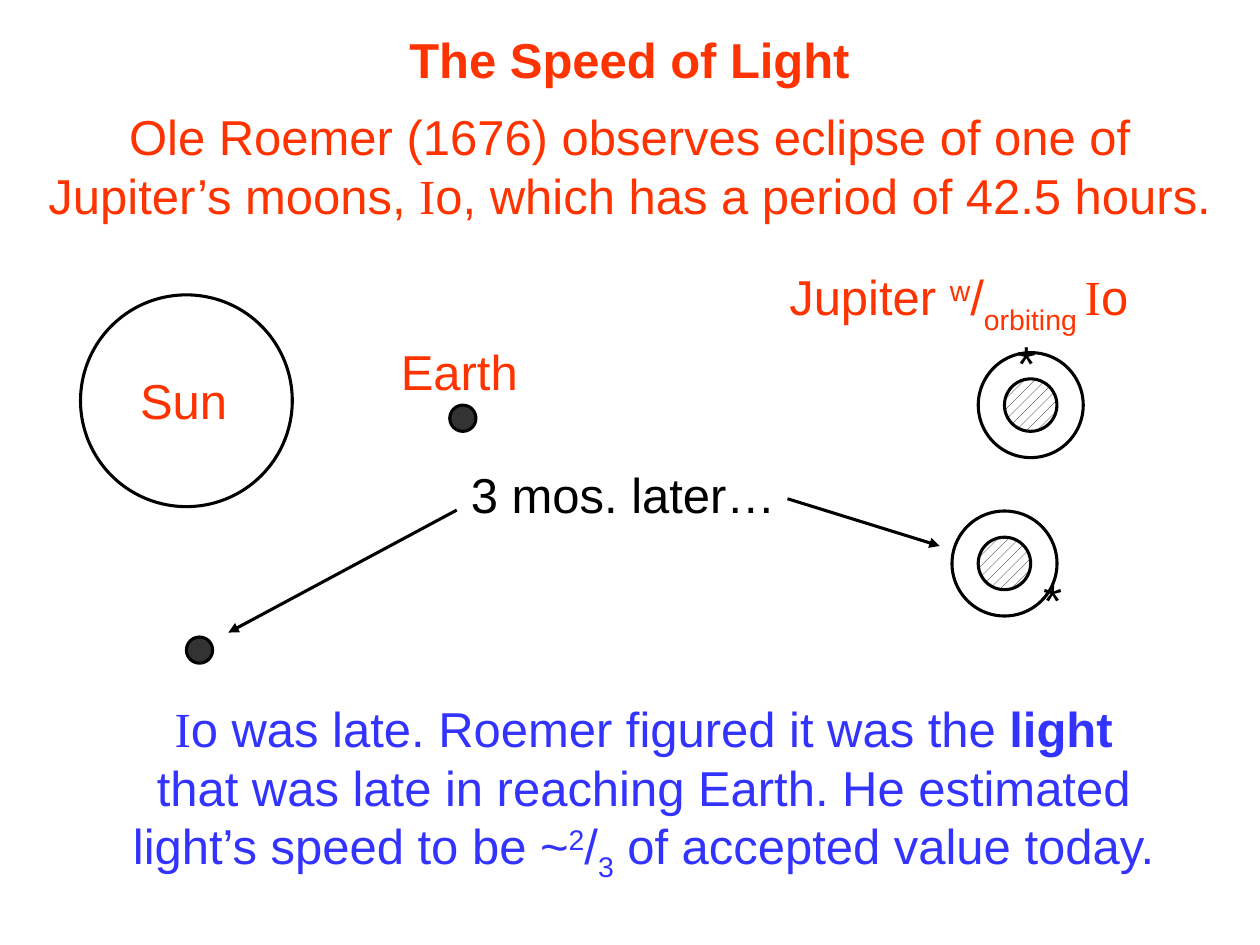
from dataclasses import dataclass

from lxml import etree
from pptx import Presentation
from pptx.dml.color import RGBColor
from pptx.enum.dml import MSO_PATTERN
from pptx.enum.shapes import MSO_CONNECTOR, MSO_SHAPE
from pptx.enum.text import MSO_ANCHOR, PP_ALIGN
from pptx.oxml.ns import qn
from pptx.util import Pt

CENTER, LEFT = PP_ALIGN.CENTER, PP_ALIGN.LEFT
MIDDLE, TOP = MSO_ANCHOR.MIDDLE, MSO_ANCHOR.TOP
ELLIPSE = MSO_SHAPE.OVAL
STRAIGHT = MSO_CONNECTOR.STRAIGHT
DOTTED = MSO_PATTERN.PERCENT_20


@dataclass(frozen=True)
class Theme:
    red: RGBColor = RGBColor(0xFF, 0x33, 0x00)
    blue: RGBColor = RGBColor(0x33, 0x33, 0xFF)
    black: RGBColor = RGBColor(0, 0, 0)
    white: RGBColor = RGBColor(0xFF, 0xFF, 0xFF)
    earth: RGBColor = RGBColor(0x33, 0x33, 0x33)
    font: str = "Arial"
    serif: str = "Times New Roman"
    size: float = 28
    line: float = 1.75


SERIF_I = ("I", {"serif": True})


class SlideBuilder:
    def __init__(self, slide, theme):
        self.slide = slide
        self.theme = theme

    def fill_text(self, box, lines, color, align=LEFT, anchor=TOP, wrap=True, bold=False):
        frame = box.text_frame
        frame.word_wrap = wrap
        frame.vertical_anchor = anchor
        for index, parts in enumerate(lines):
            para = frame.add_paragraph() if index else frame.paragraphs[0]
            para.alignment = align
            para.font.size = Pt(self.theme.size)
            para.font.color.rgb = color
            para.font.bold = bold
            mixed = any(style.get("serif") for _, style in parts)
            if not mixed:
                para.font.name = self.theme.font
            for text, style in parts:
                span = para.add_run()
                span.text = text
                if mixed:
                    span.font.name = self.theme.serif if style.get("serif") else self.theme.font
                if "bold" in style:
                    span.font.bold = style["bold"]
                if "baseline" in style:
                    span.font._element.set("baseline", str(style["baseline"] * 1000))

    def title(self, text, left, top, width, height):
        box = self.slide.shapes.title
        box.left, box.top, box.width, box.height = map(Pt, (left, top, width, height))
        self.fill_text(box, [[(text, {})]], self.theme.red, CENTER, MIDDLE, False, True)

    def text(self, lines, left, top, width, height, color, **layout):
        box = self.slide.shapes.add_textbox(*map(Pt, (left, top, width, height)))
        self.fill_text(box, lines, color, **layout)

    def label(self, text, left, top, width, height, color, **layout):
        self.text([[(text, {})]], left, top, width, height, color, **layout)

    def circle(self, x, y, radius, fill=None, pattern=None):
        size = 2 * radius
        shape = self.slide.shapes.add_shape(
            ELLIPSE, *map(Pt, (x - radius, y - radius, size, size)))
        shape.shadow.inherit = False
        shape.line.color.rgb = self.theme.black
        shape.line.width = Pt(self.theme.line)
        if pattern is not None:
            shape.fill.patterned()
            shape.fill.pattern = pattern
            shape.fill.fore_color.rgb = self.theme.black
            shape.fill.back_color.rgb = self.theme.white
        elif fill is not None:
            shape.fill.solid()
            shape.fill.fore_color.rgb = fill
        else:
            shape.fill.background()

    def earth(self, x, y):
        self.circle(x, y, 7.5, fill=self.theme.earth)

    def jupiter(self, x, y, moon_left, moon_top):
        self.circle(x, y, 15, pattern=DOTTED)
        self.circle(x, y, 30)
        self.label("*", moon_left, moon_top, 30, 45, self.theme.black)

    def arrow(self, start_x, start_y, end_x, end_y):
        line = self.slide.shapes.add_connector(
            STRAIGHT, *map(Pt, (start_x, start_y, end_x, end_y)))
        line.line.color.rgb = self.theme.black
        line.line.width = Pt(self.theme.line)
        outline = line.line._get_or_add_ln()
        etree.SubElement(outline, qn("a:tailEnd"), type="triangle")
        etree.SubElement(line._element.spPr, qn("a:effectLst"))


def main():
    deck = Presentation()
    deck.slide_width, deck.slide_height = Pt(720), Pt(540)
    theme = Theme()
    page = SlideBuilder(deck.slides.add_slide(deck.slide_layouts[5]), theme)

    page.title("The Speed of Light", 226.5, 13, 266.5, 41)
    page.text([
        [("Ole Roemer (1676) observes eclipse of one of", {})],
        [("Jupiter’s moons, ", {}), SERIF_I, ("o, which has a period of 42.5 hours.", {})],
    ], 19.5, 57.5, 680.5, 74.5, theme.red, align=CENTER, anchor=MIDDLE, wrap=False)

    page.circle(106.5, 229, 60.5)
    page.label("Sun", 73, 208, 72, 45, theme.red)
    page.earth(264.5, 239)
    page.label("Earth", 222, 191.5, 94, 45, theme.red)

    page.text([[
        ("Jupiter ", {}), ("w", {"baseline": 30}), ("/", {}),
        ("orbiting ", {"baseline": -30}), SERIF_I, ("o", {}),
    ]], 444, 149, 230, 45, theme.red)
    page.jupiter(589, 231.5, 574, 186.5)

    page.label("3 mos. later…", 262, 261.5, 196.5, 41, theme.black,
               anchor=MIDDLE, wrap=False)
    page.earth(114, 371.5)
    page.jupiter(574, 322, 589, 322)
    page.arrow(261, 291.5, 130.5, 361.5)
    page.arrow(450, 285, 537, 312)

    page.text([
        [SERIF_I, ("o was late. Roemer figured it was the ", {}), ("light", {"bold": True})],
        [("that was late in reaching Earth. He estimated", {})],
        [("light’s speed to be ~", {}), ("2", {"baseline": 30}), ("/", {}),
         ("3", {"baseline": -25}), (" of accepted value today.", {})],
    ], 65, 395.5, 605.5, 108, theme.blue, align=CENTER, wrap=False)

    deck.save("out.pptx")


if __name__ == "__main__":
    main()
